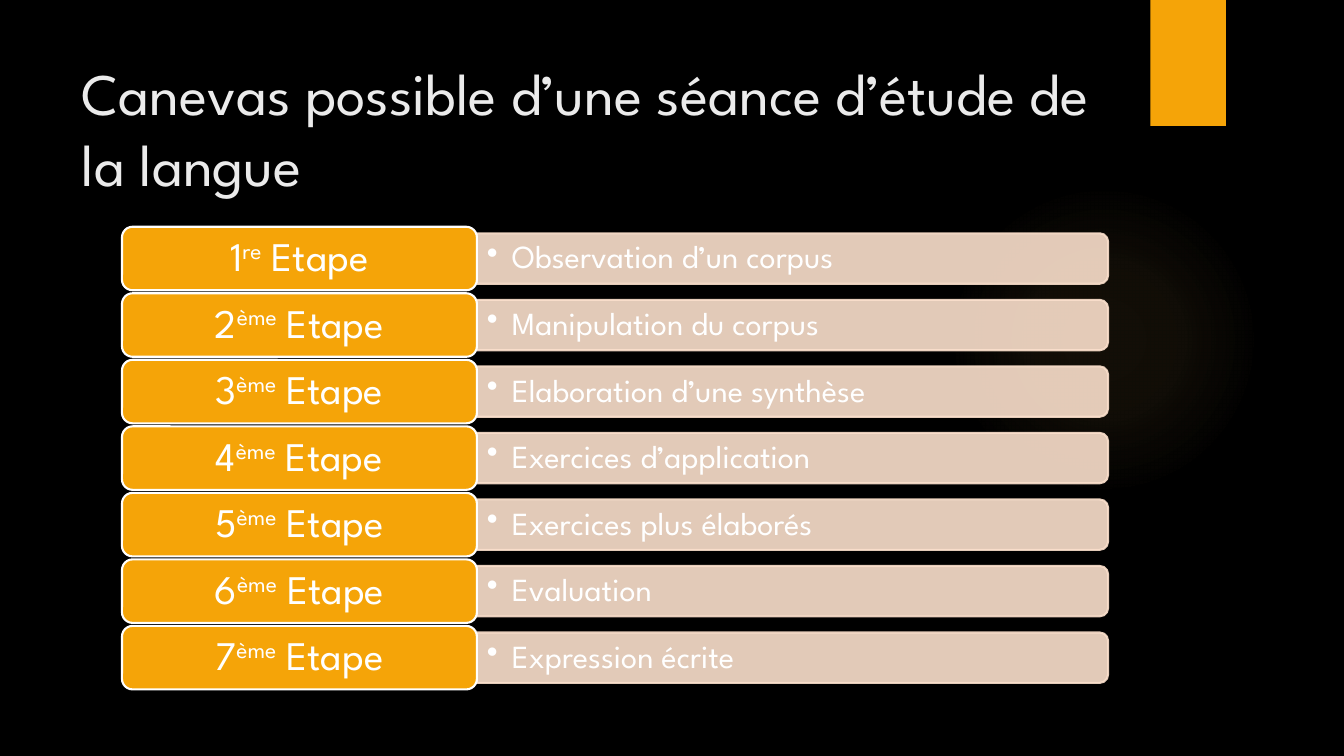
from lxml import etree
from pptx import Presentation
from pptx.dml.color import RGBColor
from pptx.enum.shapes import MSO_SHAPE
from pptx.enum.text import MSO_ANCHOR, MSO_AUTO_SIZE, PP_ALIGN
from pptx.oxml import parse_xml
from pptx.oxml.ns import nsdecls, qn
from pptx.util import Inches, Pt

OVAL, RECTANGLE = MSO_SHAPE.OVAL, MSO_SHAPE.RECTANGLE
ROUNDED, TOP_ROUNDED = MSO_SHAPE.ROUNDED_RECTANGLE, MSO_SHAPE.ROUND_2_SAME_RECTANGLE
MIDDLE, NO_AUTOFIT = MSO_ANCHOR.MIDDLE, MSO_AUTO_SIZE.NONE
LEFT, CENTER = PP_ALIGN.LEFT, PP_ALIGN.CENTER

BLACK = RGBColor(0x00, 0x00, 0x00)
WHITE = RGBColor(0xFF, 0xFF, 0xFF)
TITLE_GREY = RGBColor(0xEB, 0xEB, 0xEB)
ORANGE = RGBColor(0xF5, 0xA4, 0x08)
PEACH = RGBColor(0xFB, 0xE0, 0xCC)
GLOW = RGBColor(0xFA, 0xC9, 0x6A)
FONT = "League Spartan"

TOP, ROW_PITCH = 2.25, 0.66
LABEL_LEFT, LABEL_WIDTH, LABEL_HEIGHT = 1.21, 3.52, 0.63
BAR_LEFT = LABEL_LEFT + LABEL_WIDTH
BAR_WIDTH, BAR_HEIGHT = 6.26, 0.5

STEPS = [
    ("1", "re", "Observation d’un corpus"),
    ("2", "ème", "Manipulation du corpus"),
    ("3", "ème", "Elaboration d’une synthèse"),
    ("4", "ème", "Exercices d’application"),
    ("5", "ème", "Exercices plus élaborés"),
    ("6", "ème", "Evaluation"),
    ("7", "ème", "Expression écrite"),
]


def add_box(slide, preset, left, top, width, height, fill, line=None):
    shape = slide.shapes.add_shape(
        preset, Inches(left), Inches(top), Inches(width), Inches(height))
    shape.shadow.inherit = False
    shape.fill.solid()
    shape.fill.fore_color.rgb = fill
    if line is None:
        shape.line.fill.background()
    else:
        shape.line.color.rgb = line
        shape.line.width = Pt(1.5)
    return shape


def set_opacity(shape, percent):
    """Apply the opacity to both the fill and the line."""
    for color in shape._element.spPr.iter(qn("a:srgbClr")):
        etree.SubElement(color, qn("a:alpha")).set("val", str(percent * 1000))


def format_runs(paragraph, size, color):
    for run in paragraph.runs:
        run.font.name = FONT
        run.font.size = Pt(size)
        run.font.color.rgb = color


def set_frame(text_frame, side, edge):
    text_frame.word_wrap = True
    text_frame.auto_size = NO_AUTOFIT
    text_frame.vertical_anchor = MIDDLE
    text_frame.margin_left = text_frame.margin_right = Inches(side)
    text_frame.margin_top = text_frame.margin_bottom = Inches(edge)


def add_glow(slide):
    """Draw the faint round light that fades out from its centre."""
    glow = add_box(slide, OVAL, 9.41, 1.83, 3.08, 3.08, GLOW)
    stops = "".join(
        f'<a:gs pos="{position * 1000}"><a:srgbClr val="{GLOW}">'
        f'<a:alpha val="{opacity * 1000}"/></a:srgbClr></a:gs>'
        for position, opacity in ((0, 7), (36, 6), (69, 0)))
    gradient = parse_xml(
        f'<a:gradFill {nsdecls("a")} rotWithShape="1"><a:gsLst>{stops}</a:gsLst>'
        '<a:path path="circle"><a:fillToRect l="50000" t="50000" r="50000" b="50000"/>'
        '</a:path></a:gradFill>')
    properties = glow._element.spPr
    properties.replace(properties.find(qn("a:solidFill")), gradient)


def add_title(slide, text):
    title = slide.shapes.title
    title.left, title.top = Inches(0.71), Inches(0.5)
    title.width, title.height = Inches(10.29), Inches(1.53)
    set_frame(title.text_frame, 0.1, 0.05)
    title.text_frame.text = text
    paragraph = title.text_frame.paragraphs[0]
    paragraph.alignment = LEFT
    format_runs(paragraph, 42, TITLE_GREY)


def add_bar(slide, center, text):
    """Draw a bar rounded on its right side, with one bulleted line."""
    bar = add_box(slide, TOP_ROUNDED, BAR_LEFT + (BAR_WIDTH - BAR_HEIGHT) / 2,
                  center - BAR_WIDTH / 2, BAR_HEIGHT, BAR_WIDTH, PEACH, PEACH)
    bar.rotation = 90
    set_opacity(bar, 90)

    box = slide.shapes.add_textbox(
        Inches(BAR_LEFT), Inches(center - BAR_HEIGHT / 2),
        Inches(BAR_WIDTH), Inches(BAR_HEIGHT))
    set_frame(box.text_frame, 0.1, 0.05)
    box.text_frame.text = text
    paragraph = box.text_frame.paragraphs[0]
    properties = paragraph._p.get_or_add_pPr()
    properties.set("marL", str(Inches(0.25)))
    properties.set("indent", str(-Inches(0.25)))
    etree.SubElement(properties, qn("a:buChar")).set("char", "•")
    paragraph.line_spacing = 0.9
    format_runs(paragraph, 23, WHITE)


def add_label(slide, top, number, suffix):
    label = add_box(slide, ROUNDED, LABEL_LEFT, top,
                    LABEL_WIDTH, LABEL_HEIGHT, ORANGE, WHITE)
    set_frame(label.text_frame, 0.15, 0.06)
    paragraph = label.text_frame.paragraphs[0]
    paragraph.alignment = CENTER
    paragraph.line_spacing = 0.9
    for text in (number, suffix, " Etape"):
        paragraph.add_run().text = text
    format_runs(paragraph, 29, WHITE)
    paragraph.runs[1].font._element.set("baseline", "30000")


def main():
    presentation = Presentation()
    presentation.slide_width = Inches(13.33)
    presentation.slide_height = Inches(7.5)
    slide = presentation.slides.add_slide(presentation.slide_layouts[5])
    slide.background.fill.solid()
    slide.background.fill.fore_color.rgb = BLACK

    add_glow(slide)
    add_box(slide, RECTANGLE, 11.41, 0, 0.75, 1.25, ORANGE)
    add_title(slide, "Canevas possible d’une séance d’étude de la langue")
    for row, (number, suffix, activity) in enumerate(STEPS):
        top = TOP + row * ROW_PITCH
        add_bar(slide, top + LABEL_HEIGHT / 2, activity)
        add_label(slide, top, number, suffix)
    presentation.save("out.pptx")


if __name__ == "__main__":
    main()
